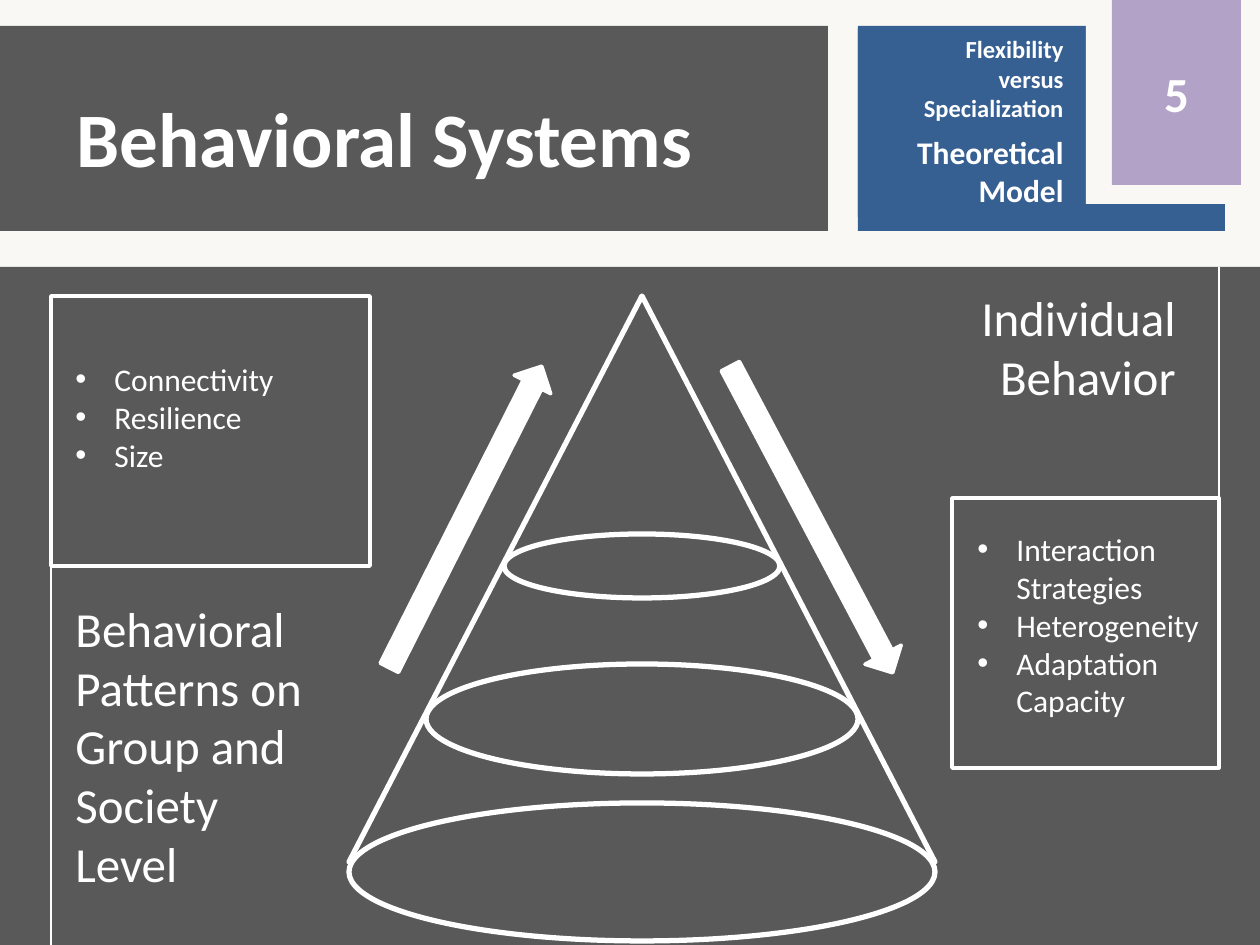
from pptx import Presentation
from pptx.dml.color import RGBColor as Rgb
from pptx.enum.shapes import MSO_CONNECTOR as Conn, MSO_SHAPE as Geo
from pptx.enum.text import MSO_ANCHOR as Anchor, PP_ALIGN as Align
from pptx.oxml.ns import qn
from pptx.util import Pt
from lxml.etree import SubElement as Sub

SCALE = 914400 / 126
WIDE, HIGH = 1260, 945
FONT = "Calibri"
HUES = {
    "cream": "F9F8F5",
    "gray": "595959",
    "blue": "376092",
    "lilac": "B3A2C7",
    "white": "FFFFFF",
}


def emu(px):
    return round(px * SCALE)


def hue(name):
    return Rgb.from_string(HUES[name])


def write(shape, *paras, size=18, bold=False, align=Align.LEFT,
          anchor=Anchor.TOP, after=0, bullet=False):
    frame = shape.text_frame
    frame.word_wrap = True
    frame.vertical_anchor = anchor
    sizes = size if isinstance(size, tuple) else (size,) * len(paras)
    for i, (text, points) in enumerate(zip(paras, sizes)):
        para = frame.add_paragraph() if i else frame.paragraphs[0]
        para.text = text
        para.alignment = align
        para.space_after = Pt(after)
        for run in para.runs:
            font = run.font
            font.name, font.size, font.bold = FONT, Pt(points), bold
            font.color.rgb = hue("white")
        if bullet:
            props = para._p.get_or_add_pPr()
            props.set("marL", str(emu(39)))
            props.set("indent", str(-emu(39)))
            Sub(props, qn("a:buFont")).set("typeface", "Arial")
            Sub(props, qn("a:buChar")).set("char", "•")


class Deck:
    def __init__(self):
        self.file = Presentation()
        self.file.slide_width = emu(WIDE)
        self.file.slide_height = emu(HIGH)
        self.slide = self.file.slides.add_slide(self.file.slide_layouts[6])

    def shape(self, kind, *box, fill=None, line=0, turn=0):
        item = self.slide.shapes.add_shape(kind, *map(emu, box))
        item.shadow.inherit = False
        item.rotation = turn
        if fill:
            item.fill.solid()
            item.fill.fore_color.rgb = hue(fill)
        else:
            item.fill.background()
        if line:
            item.line.color.rgb = hue("white")
            item.line.width = Pt(line)
        else:
            item.line.fill.background()
        return item

    def text(self, box, *paras, **style):
        item = self.slide.shapes.add_textbox(*map(emu, box))
        write(item, *paras, **style)

    def line(self, x, top, end):
        item = self.slide.shapes.add_connector(
            Conn.STRAIGHT, *map(emu, (x, top, x, end)))
        item.line.color.rgb = hue("white")
        item.line.width = Pt(1.5)
        Sub(item._element.spPr, qn("a:effectLst"))


def header(deck):
    deck.shape(Geo.RECTANGLE, 0, 0, WIDE, HIGH, fill="cream")
    deck.shape(Geo.RECTANGLE, 0, 26, 828, 205, fill="gray")
    deck.text((64, 35, 1071, 203), "Behavioral Systems",
              size=44, bold=True, anchor=Anchor.MIDDLE)
    deck.shape(Geo.RECTANGLE, 858, 26, 367, 205, fill="blue")
    deck.shape(Geo.RECTANGLE, 1086, 0, 174, 204, fill="cream")
    badge = deck.shape(Geo.RECTANGLE, 1112, 0, 129, 185, fill="lilac")
    write(badge, "5", size=28, bold=True, align=Align.CENTER,
          anchor=Anchor.MIDDLE)
    topic = deck.shape(Geo.RECTANGLE, 858, 28, 218, 189, fill="blue")
    write(topic, "Flexibility\vversus\vSpecialization", "Theoretical\vModel",
          size=(14, 18), bold=True, align=Align.RIGHT, after=6)


def cone(deck):
    mid = 642
    deck.shape(Geo.ISOSCELES_TRIANGLE, 349, 296, 586, 566, line=3)
    for wide, top, high in ((586, 803, 138), (432, 664, 110), (276, 534, 64)):
        deck.shape(Geo.OVAL, mid - wide // 2, top, wide, high,
                   fill="gray", line=3)
    for left, top, high, turn in ((791, 346, 347, 332.1),
                                  (445, 348, 338, 206.8)):
        deck.shape(Geo.DOWN_ARROW, left, top, 41, high,
                   fill="white", line=2, turn=turn)


def labels(deck):
    deck.text((911, 281, 277, 131), "Individual Behavior",
              size=28, align=Align.RIGHT)
    deck.text((63, 592, 346, 310),
              "Behavioral Patterns on Group and \vSociety \vLevel", size=28)
    deck.shape(Geo.RECTANGLE, 51, 296, 319, 270, line=2)
    deck.line(51, 566, HIGH)
    deck.text((63, 354, 286, 165), "Connectivity", "Resilience", "Size",
              bullet=True)
    deck.shape(Geo.RECTANGLE, 952, 498, 267, 270, line=2)
    deck.line(1219, 267, 651)
    deck.text((965, 524, 286, 242), "Interaction Strategies",
              "Heterogeneity", "Adaptation Capacity", bullet=True)


def main():
    deck = Deck()
    header(deck)
    deck.shape(Geo.RECTANGLE, 0, 267, WIDE, 678, fill="gray")
    cone(deck)
    labels(deck)
    deck.file.save("out.pptx")


if __name__ == "__main__":
    main()
